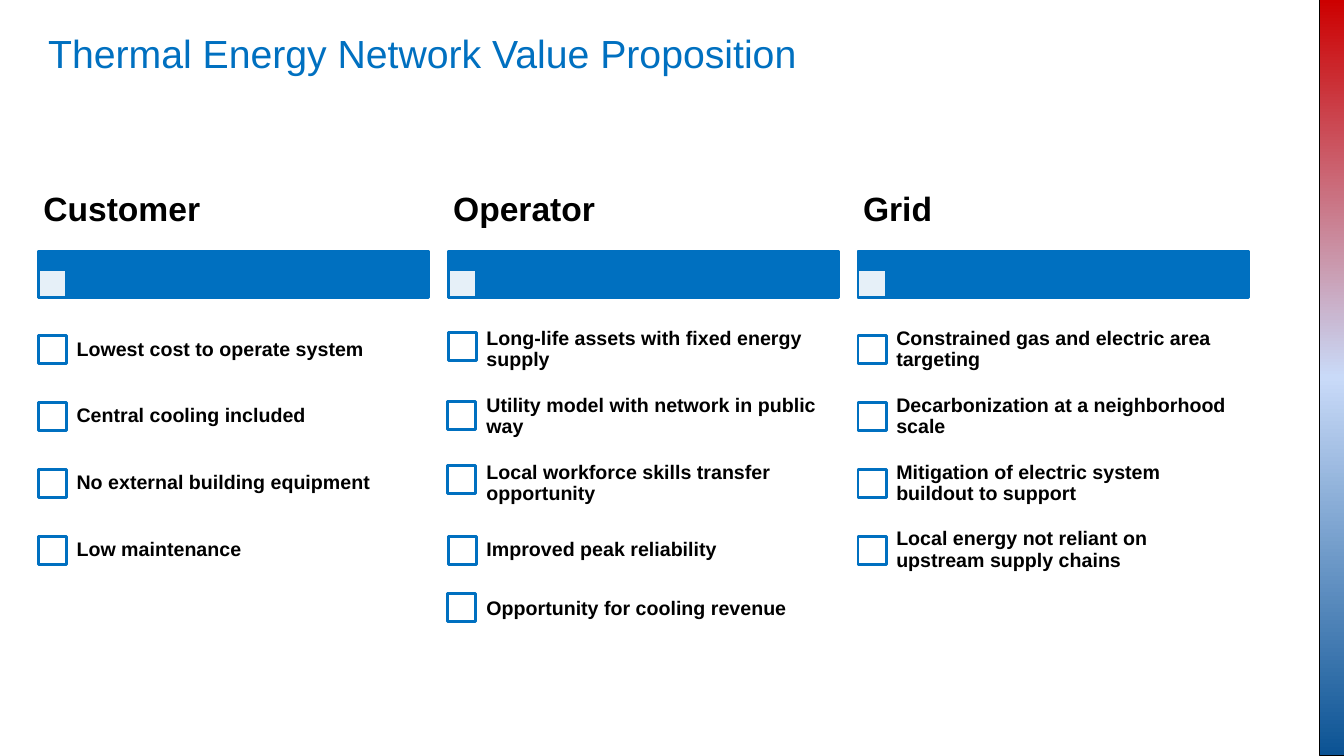
from copy import deepcopy

from lxml import etree
from pptx import Presentation
from pptx.dml.color import RGBColor
from pptx.enum import shapes, text
from pptx.oxml.ns import qn
from pptx.util import Inches, Pt

BLUE = RGBColor(0x00, 0x70, 0xC0)
WHITE = RGBColor(0xFF, 0xFF, 0xFF)
BLACK = RGBColor(0x00, 0x00, 0x00)
STRIPE_COLOURS = [RGBColor(0xCC, 0x00, 0x00), RGBColor(0xC9, 0xDA, 0xF8), RGBColor(0x0B, 0x53, 0x94)]

COLUMN_LEFT, COLUMN_PITCH, COLUMN_WIDTH = 0.38, 4.065, 3.87
ROW_TOP, ROW_PITCH, ROW_HEIGHT = 3.14, 0.663, 0.66
BOX_SIZE, BOX_DROP, LABEL_INDENT = 0.28, 0.19, 0.27
EXTRA_ROW_TOP = 5.71

COLUMNS = [
    ("Customer", [
        "Lowest cost to operate system",
        "Central cooling included",
        "No external building equipment",
        "Low maintenance",
    ]),
    ("Operator", [
        "Long-life assets with fixed energy supply",
        "Utility model with network in public way",
        "Local workforce skills transfer opportunity",
        "Improved peak reliability",
        "Opportunity for cooling revenue",
    ]),
    ("Grid", [
        "Constrained gas and electric area targeting",
        "Decarbonization at a neighborhood scale",
        "Mitigation of electric system buildout to support",
        "Local energy not reliant on upstream supply chains",
    ]),
]
# Small shifts (right, down) of check boxes, by column heading and row
BOX_SHIFTS = {
    ("Operator", 0): (0, -0.03),
    ("Operator", 1): (-0.01, -0.01),
    ("Operator", 2): (-0.01, -0.04),
    ("Operator", 4): (-0.01, -0.01),
}


def add_text(slide, words, left, top, width, height, *, size, colour=BLACK, bold=False,
             inset=(0.11, 0.11), anchor=text.MSO_ANCHOR.MIDDLE, line_spacing=0.9):
    """Add a wrapped text box; inset is (horizontal, vertical) in inches."""
    box = slide.shapes.add_textbox(Inches(left), Inches(top), Inches(width), Inches(height))
    frame = box.text_frame
    frame.word_wrap = True
    frame.vertical_anchor = anchor
    frame.margin_left = frame.margin_right = Inches(inset[0])
    frame.margin_top = frame.margin_bottom = Inches(inset[1])
    paragraph = frame.paragraphs[0]
    paragraph.line_spacing = line_spacing
    run = paragraph.add_run()
    run.text = words
    run.font.name = "Arial"
    run.font.size = Pt(size)
    run.font.bold = bold
    run.font.color.rgb = colour


def add_rectangle(slide, left, top, width, height, *, fill=None, line=BLUE, line_width=2, opacity=100):
    shape = slide.shapes.add_shape(shapes.MSO_SHAPE.RECTANGLE, Inches(left), Inches(top),
                                   Inches(width), Inches(height))
    shape.shadow.inherit = False
    shape.line.color.rgb = line
    shape.line.width = Pt(line_width)
    if fill is not None:
        shape.fill.solid()
        shape.fill.fore_color.rgb = fill
    if opacity < 100:
        colour = shape._element.spPr.find(qn("a:solidFill"))[0]
        etree.SubElement(colour, qn("a:alpha")).set("val", str(opacity * 1000))
    return shape


def add_gradient_stripe(slide):
    stripe = add_rectangle(slide, 9.46, 3.62, 7.5, 0.25, line=BLACK, line_width=0.75)
    stripe.rotation = 90
    stripe.fill.gradient()
    stripe.fill.gradient_angle = 0
    stop_list = stripe._element.spPr.find(qn("a:gradFill")).find(qn("a:gsLst"))
    stop_list.append(deepcopy(stop_list[0]))
    for stop, colour, position in zip(stripe.fill.gradient_stops, STRIPE_COLOURS, (0, 0.5, 1)):
        stop.color.rgb = colour
        stop.position = position


def add_column(slide, left, heading, benefits):
    add_rectangle(slide, left, 2.49, COLUMN_WIDTH, 0.46, fill=BLUE)
    add_rectangle(slide, left, 2.67, BOX_SIZE, BOX_SIZE, fill=WHITE, opacity=90)
    add_text(slide, heading, left, 1.68, COLUMN_WIDTH, 0.82, size=24, bold=True, inset=(0.05, 0.03))
    for row, benefit in enumerate(benefits):
        top = ROW_TOP + row * ROW_PITCH if row < 4 else EXTRA_ROW_TOP
        right, down = BOX_SHIFTS.get((heading, row), (0, 0))
        add_rectangle(slide, left + right, top + BOX_DROP + down, BOX_SIZE, BOX_SIZE, fill=WHITE)
        add_text(slide, benefit, left + LABEL_INDENT, top, COLUMN_WIDTH - LABEL_INDENT, ROW_HEIGHT,
                 size=14, bold=True)


def main():
    presentation = Presentation()
    presentation.slide_width = Inches(13.33)
    presentation.slide_height = Inches(7.5)
    slide = presentation.slides.add_slide(presentation.slide_layouts[6])
    add_text(slide, "Thermal Energy Network Value Proposition", 0.38, 0.2, 10.01, 0.97, size=28,
             colour=BLUE, inset=(0.1, 0.09), anchor=text.MSO_ANCHOR.TOP, line_spacing=1.0)
    for index, (heading, benefits) in enumerate(COLUMNS):
        add_column(slide, COLUMN_LEFT + index * COLUMN_PITCH, heading, benefits)
    add_gradient_stripe(slide)
    presentation.save("out.pptx")


if __name__ == "__main__":
    main()
